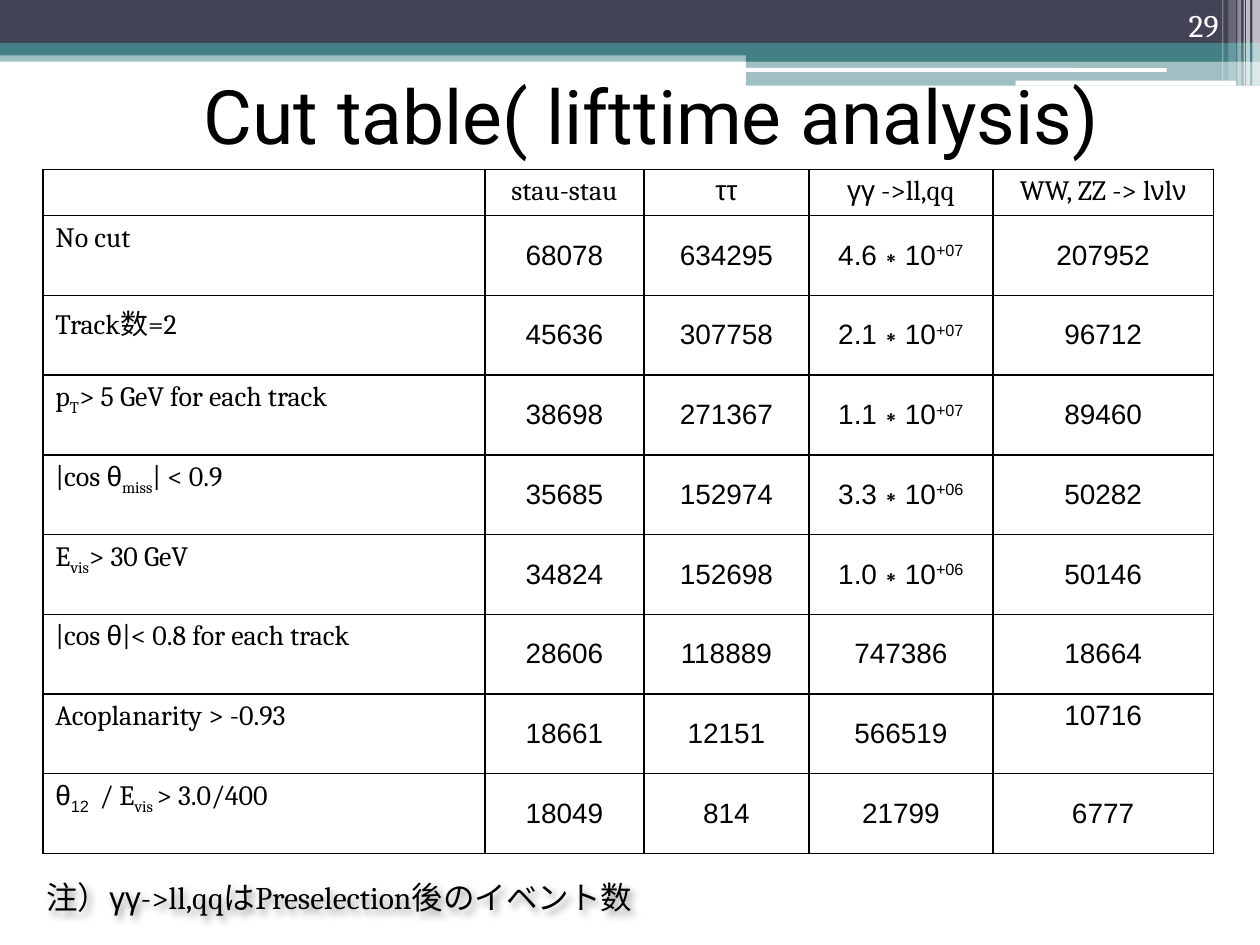
from itertools import groupby

from lxml import etree
from pptx import Presentation
from pptx.dml.color import RGBColor
from pptx.enum.shapes import MSO_SHAPE
from pptx.enum.text import MSO_ANCHOR, PP_ALIGN
from pptx.oxml.ns import qn
from pptx.util import Inches, Pt

RECT, ROUND = MSO_SHAPE.RECTANGLE, MSO_SHAPE.ROUNDED_RECTANGLE
TOP, MIDDLE, BOTTOM = MSO_ANCHOR.TOP, MSO_ANCHOR.MIDDLE, MSO_ANCHOR.BOTTOM
LEFT, CENTER, RIGHT = PP_ALIGN.LEFT, PP_ALIGN.CENTER, PP_ALIGN.RIGHT

BLACK = RGBColor(0x00, 0x00, 0x00)
WHITE = RGBColor(0xFF, 0xFF, 0xFF)
SLATE = RGBColor(0x42, 0x44, 0x56)
TEAL = RGBColor(0x43, 0x80, 0x86)

SERIF, SANS, TITLE_FONT = "Cambria", "Arial", "Roboto"
GREEK = "γθντ"
SUB, SUPER = -25, 30
COLS, ROWS = 100, 75  # grid over the whole slide

HEADERS = ["", "stau-stau", "ττ", "γγ ->ll,qq", "WW, ZZ -> lνlν"]
COL_WIDTHS = [35.1, 12.6, 13.1, 14.6, 17.5]
HEADER_HEIGHT, ROW_HEIGHT = 3.55, 6.33
CUTS = [
    (["No cut"], "68078", "634295", ["4.6∗10", ("+07", SUPER)], "207952"),
    (["Track数=2"], "45636", "307758", ["2.1∗10", ("+07", SUPER)], "96712"),
    (["p", ("T", SUB), "> 5 GeV for each track"],
     "38698", "271367", ["1.1∗10", ("+07", SUPER)], "89460"),
    (["|cos θ", ("miss", SUB), "| < 0.9"],
     "35685", "152974", ["3.3∗10", ("+06", SUPER)], "50282"),
    (["E", ("vis", SUB), "> 30 GeV"],
     "34824", "152698", ["1.0∗10", ("+06", SUPER)], "50146"),
    (["|cos θ|< 0.8 for each track"], "28606", "118889", "747386", "18664"),
    (["Acoplanarity > -0.93"], "18661", "12151", "566519", "10716"),
    (["θ", ("12 ", SUB, SANS), " / E", ("vis ", SUB), "> 3.0/400"],
     "18049", "814", "21799", "6777"),
]
TOP_ALIGNED_VALUE = "10716"

# left, top, width, height, colour, opacity in percent
BANDS = [
    (0, 4, 100, 0.9, TEAL, 50),
    (0, 0, 100, 3.4, SLATE, 100),
    (0, 3.4, 100, 1, TEAL, 100),
    (59.2, 3.9, 40.8, 1, TEAL, 100),
    (59.2, 4.8, 40.8, 2, TEAL, 50),
]
RULES = [(59.1, 5.4, 33.5, 0.3), (80.6, 6.4, 17.5, 0.4)]
# left, width, height, opacity in percent
STRIPES = [(99.4, 0.6, 6.8, 65), (98.9, 0.3, 6.8, 65), (98.7, 0.1, 6.8, 60),
           (98.2, 0.3, 6.8, 40), (97.5, 0.6, 6.4, 20), (97, 0.1, 6.4, 30)]


def add_xml(parent, tag, **attributes):
    child = etree.SubElement(parent, qn(tag))
    for name, value in attributes.items():
        child.set(name, str(value))
    return child


class SlideBuilder:
    def __init__(self, prs):
        self.width, self.height = prs.slide_width, prs.slide_height
        self.slide = prs.slides.add_slide(prs.slide_layouts[6])

    def x(self, cols):
        return round(self.width * cols / COLS)

    def y(self, rows):
        return round(self.height * rows / ROWS)

    def box(self, left, top, width, height):
        return self.x(left), self.y(top), self.x(width), self.y(height)

    def block(self, left, top, width, height, color, opacity=100, kind=RECT):
        s = self.slide.shapes.add_shape(kind, *self.box(left, top, width, height))
        s.shadow.inherit = False
        s.fill.solid()
        s.fill.fore_color.rgb = color
        s.line.fill.background()
        if opacity < 100:
            clr = s._element.spPr.find(qn("a:solidFill"))[0]
            add_xml(clr, "a:alpha", val=opacity * 1000)

    def fill_paragraph(self, p, parts, size, font=SERIF, color=BLACK, align=LEFT):
        """Parts are strings or (text, baseline[, font]); Greek is set in sans."""
        p.alignment = align
        p.font.size = Pt(size)
        p.font.name = font
        p.font.color.rgb = color
        for part in parts:
            text, base, name = (part, 0, font) if isinstance(part, str) else (*part, font)[:3]
            for greek, letters in groupby(text, key=lambda letter: letter in GREEK):
                r = p.add_run()
                r.text = "".join(letters)
                run_font = SANS if greek else name
                if run_font != font:
                    r.font.name = run_font
                if base:
                    r.font._element.set("baseline", str(base * 1000))

    def text(self, left, top, width, height, parts, size, anchor=MIDDLE, **style):
        sp = self.slide.shapes.add_textbox(*self.box(left, top, width, height))
        tf = sp.text_frame
        tf.word_wrap = True
        tf.vertical_anchor = anchor
        self.fill_paragraph(tf.paragraphs[0], parts, size, **style)
        return sp

    def soft_shadow(self, sp):
        effects = add_xml(sp._element.spPr, "a:effectLst")
        shadow = add_xml(effects, "a:outerShdw", blurRad=Pt(4), dist=Pt(3),
                         dir=2700000, algn="tl", rotWithShape=0)
        clr = add_xml(shadow, "a:srgbClr", val=BLACK)
        add_xml(clr, "a:alpha", val=40000)

    def borders(self, cell):
        tc_pr = cell._tc.get_or_add_tcPr()
        for side in ("a:lnL", "a:lnR", "a:lnT", "a:lnB"):
            line = add_xml(tc_pr, side, w=Pt(1))
            add_xml(add_xml(line, "a:solidFill"), "a:srgbClr", val=BLACK)

    def cell(self, cell, parts, anchor=TOP, **style):
        self.borders(cell)
        cell.fill.background()
        cell.vertical_anchor = anchor
        self.fill_paragraph(cell.text_frame.paragraphs[0], parts, 16, **style)

    def table(self, left, top, headers, rows):
        heights = [HEADER_HEIGHT] + [ROW_HEIGHT] * len(rows)
        table = self.slide.shapes.add_table(
            len(heights), len(headers),
            *self.box(left, top, sum(COL_WIDTHS), sum(heights))).table
        table.first_row = table.horz_banding = False
        for column, width in zip(table.columns, COL_WIDTHS):
            column.width = self.x(width)
        for row, height in zip(table.rows, heights):
            row.height = self.y(height)
        for i, header in enumerate(headers):
            self.cell(table.cell(0, i), [header], align=CENTER)
        for j, (label, *values) in enumerate(rows, start=1):
            self.cell(table.cell(j, 0), label)
            for i, value in enumerate(values, start=1):
                anchor = TOP if value == TOP_ALIGNED_VALUE else MIDDLE
                parts = [value] if isinstance(value, str) else value
                self.cell(table.cell(j, i), parts, anchor, font=SANS, align=CENTER)


def main():
    prs = Presentation()
    prs.slide_width, prs.slide_height = Inches(10), Inches(7.5)
    page = SlideBuilder(prs)

    for band in BANDS:
        page.block(*band)
    for rule in RULES:
        page.block(*rule, WHITE, kind=ROUND)
    for left, width, height, opacity in STRIPES:
        page.block(left, 0, width, height, WHITE, opacity)

    page.text(6.7, 2.8, 90, 12.5, ["Cut table( lifttime analysis)"], 42.9,
              font=TITLE_FONT, align=CENTER)
    page.table(3.4, 13.45, HEADERS, CUTS)
    page.text(89.4, 0, 8.3, 4, ["29"], 18, BOTTOM, color=WHITE, align=RIGHT)
    note = page.text(2.7, 68.5, 59.2, 5.4,
                     ["注）γγ->ll,qqはPreselection後のイベント数"], 18)
    page.soft_shadow(note)

    prs.save("out.pptx")


if __name__ == "__main__":
    main()
